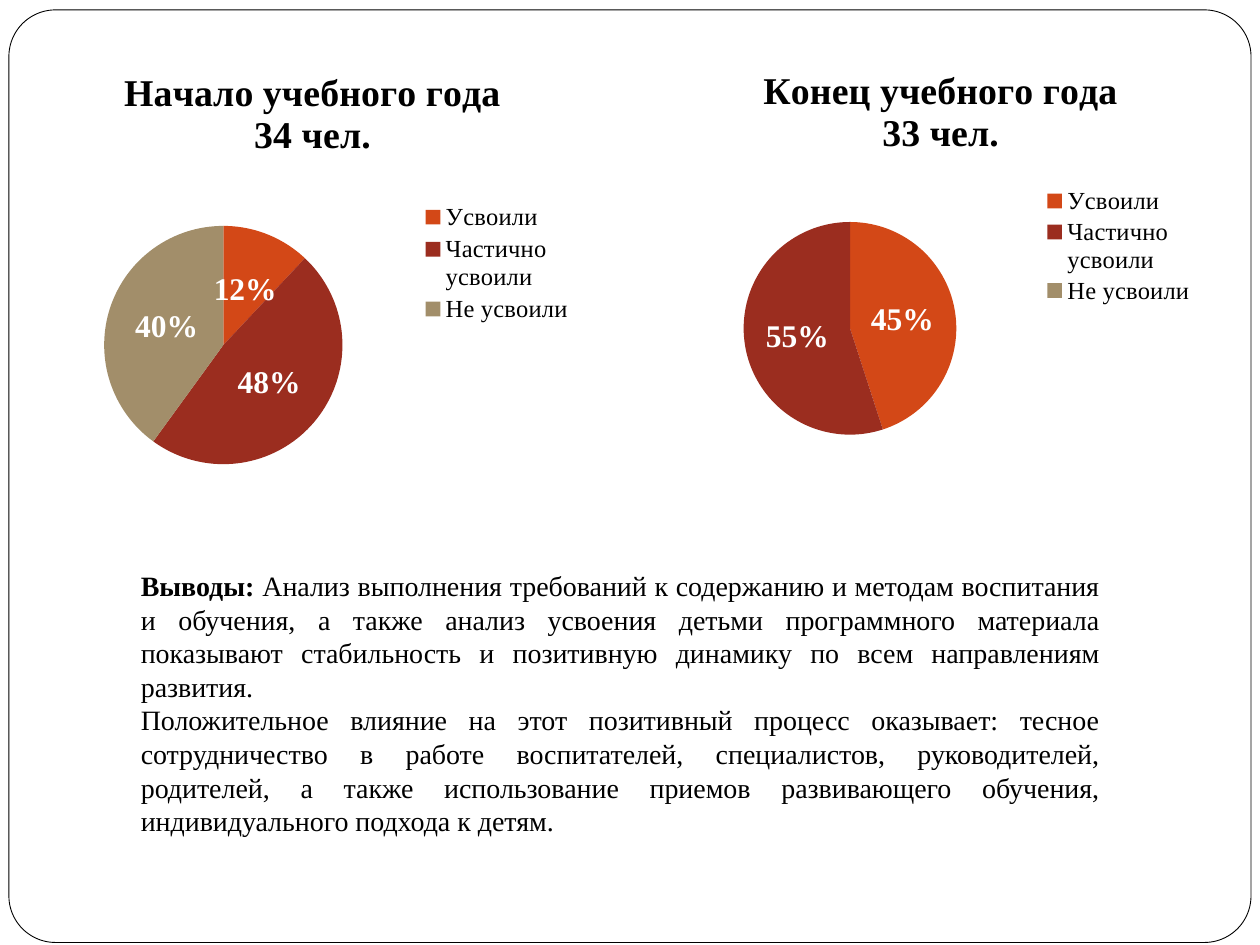
from lxml import etree
from pptx import Presentation
from pptx.chart.data import CategoryChartData
from pptx.dml.color import RGBColor
from pptx.enum.chart import XL_CHART_TYPE, XL_LABEL_POSITION, XL_LEGEND_POSITION
from pptx.enum.shapes import MSO_SHAPE
from pptx.enum.text import MSO_ANCHOR, MSO_AUTO_SIZE, PP_ALIGN
from pptx.oxml.ns import qn
from pptx.util import Cm, Pt

PIE = XL_CHART_TYPE.PIE
CENTER = XL_LABEL_POSITION.CENTER
RIGHT = XL_LEGEND_POSITION.RIGHT
ROUNDED = MSO_SHAPE.ROUNDED_RECTANGLE
MIDDLE = MSO_ANCHOR.MIDDLE
GROW = MSO_AUTO_SIZE.SHAPE_TO_FIT_TEXT
JUSTIFY = PP_ALIGN.JUSTIFY

BLACK = RGBColor(0x00, 0x00, 0x00)
WHITE = RGBColor(0xFF, 0xFF, 0xFF)
ORANGE = RGBColor(0xD3, 0x48, 0x17)
RED = RGBColor(0x9B, 0x2D, 0x1F)
SAND = RGBColor(0xA2, 0x8E, 0x6A)

LEVELS = {"Усвоили": ORANGE, "Частично усвоили": RED, "Не усвоили": SAND}

# Heading, values, chart box in cm, then title, pie and legend as chart fractions
CHARTS = [
    (("Конец учебного года", "33 чел."), (0.45, 0.55, 0),
     (13.49, 0.79, 10.72, 8.33),
     (0.17, 0.06), (0.14, 0.44, 0.4, 0.52), (0.69, 0.35, 0.31, 0.3)),
    (("Начало учебного года", "34 чел."), (0.12, 0.48, 0.4),
     (0.79, 0.79, 10.92, 8.94),
     (0.15, 0.06), (0.12, 0.42, 0.44, 0.54), (0.69, 0.36, 0.31, 0.29)),
]

CONCLUSIONS = [
    [("Выводы:", True),
     (" Анализ выполнения требований к содержанию и методам воспитания и "
      "обучения, а также анализ усвоения детьми программного материала "
      "показывают стабильность и позитивную динамику по всем направлениям "
      "развития.", False)],
    [("Положительное влияние на этот позитивный процесс оказывает: тесное "
      "сотрудничество в работе воспитателей, специалистов, руководителей, "
      "родителей, а также использование приемов развивающего обучения, "
      "индивидуального подхода к детям.", False)],
]


def format_font(font, size, color=BLACK, bold=False, name="Times New Roman"):
    font.name, font.size, font.bold = name, Pt(size), bold
    font.color.rgb = color


def add_run(p, text, **style):
    r = p.add_run()
    r.text = text
    format_font(r.font, **style)


def set_layout(parent, fractions):
    """Place a chart part by x, y and, if given, width and height."""
    for old in parent.findall(qn("c:layout")):
        parent.remove(old)
    layout = etree.Element(qn("c:layout"))
    manual = etree.SubElement(layout, qn("c:manualLayout"))
    if parent.tag == qn("c:plotArea"):
        etree.SubElement(manual, qn("c:layoutTarget"), val="inner")
    for key in ("xMode", "yMode"):
        etree.SubElement(manual, qn(f"c:{key}"), val="edge")
    for key, value in zip("xywh", fractions):
        etree.SubElement(manual, qn(f"c:{key}"), val=str(value))
    overlay = parent.find(qn("c:overlay"))
    if overlay is None:
        parent.insert(0, layout)
    else:
        overlay.addprevious(layout)


class SlideBuilder:
    def __init__(self, s, text_size=16, title_size=21.6, label_size=18, legend_size=14):
        self.s = s
        self.text_size = text_size
        self.title_size = title_size
        self.label_size = label_size
        self.legend_size = legend_size

    def frame(self, box):
        sp = self.s.shapes.add_shape(ROUNDED, *map(Cm, box))
        sp.adjustments[0] = 0.05
        sp.shadow.inherit = False
        sp.fill.solid()
        sp.fill.fore_color.rgb = WHITE
        sp.line.color.rgb = BLACK
        sp.line.width = Pt(0.5)

    def pie(self, heading, values, box, title_at, pie_at, legend_at):
        data = CategoryChartData(number_format="0%")
        data.categories = list(LEVELS)
        data.add_series(" ".join(heading), values)
        chart = self.s.shapes.add_chart(PIE, *map(Cm, box), data).chart
        format_font(chart.font, self.label_size)

        # Title
        tf = chart.chart_title.text_frame
        for i, line in enumerate(heading):
            p = tf.add_paragraph() if i else tf.paragraphs[0]
            add_run(p, line, size=self.title_size, bold=True)

        # Legend
        chart.has_legend = True
        chart.legend.position = RIGHT
        chart.legend.include_in_layout = False
        format_font(chart.legend.font, self.legend_size)

        # Slices and labels; the format hides zero values
        plot = chart.plots[0]
        plot.vary_by_categories = True
        for i, color in enumerate(LEVELS.values()):
            fill = plot.series[0].points[i].format.fill
            fill.solid()
            fill.fore_color.rgb = color
        labels = plot.series[0].data_labels
        labels.show_value = True
        labels.show_percentage = False
        labels.number_format = "0%;;"
        labels.number_format_is_linked = False
        labels.position = CENTER
        format_font(labels.font, self.label_size, WHITE, bold=True)

        root = chart.element if hasattr(chart, "element") else chart._chartSpace
        for tag, place in (("title", title_at), ("plotArea", pie_at), ("legend", legend_at)):
            set_layout(root.find(f"{qn('c:chart')}/{qn('c:' + tag)}"), place)

    def text(self, paragraphs, box):
        tf = self.s.shapes.add_textbox(*map(Cm, box)).text_frame
        tf.word_wrap = True
        tf.auto_size = GROW
        tf.vertical_anchor = MIDDLE
        for i, runs in enumerate(paragraphs):
            p = tf.add_paragraph() if i else tf.paragraphs[0]
            p.alignment = JUSTIFY
            for text, bold in runs:
                add_run(p, text, size=self.text_size, bold=bold)


def main():
    prs = Presentation()
    prs.slide_width, prs.slide_height = Cm(25.4), Cm(19.05)
    slide = SlideBuilder(prs.slides.add_slide(prs.slide_layouts[6]))

    # Border
    slide.frame((0.18, 0.2, 25.04, 18.8))

    # Results at the end and the start of the year
    for chart in CHARTS:
        slide.pie(*chart)

    # Conclusions
    slide.text(CONCLUSIONS, (2.59, 11.3, 19.84, 5.74))

    prs.save("out.pptx")


if __name__ == "__main__":
    main()
